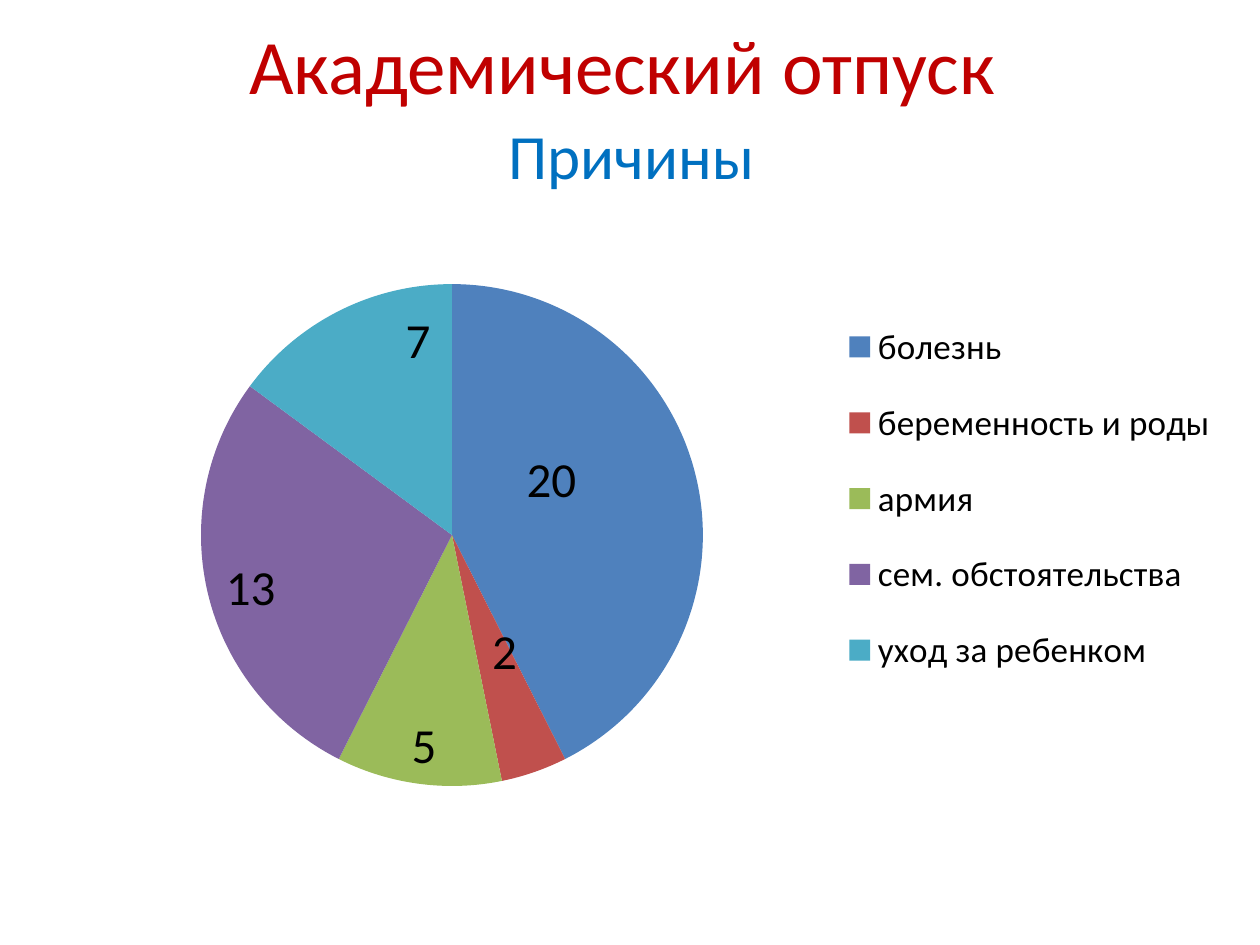
from pptx import Presentation
from pptx.chart.data import CategoryChartData
from pptx.dml.color import RGBColor
from pptx.enum.chart import XL_CHART_TYPE, XL_LABEL_POSITION, XL_LEGEND_POSITION
from pptx.enum.text import MSO_ANCHOR, PP_ALIGN
from pptx.oxml import parse_xml
from pptx.oxml.ns import nsdecls, qn
from pptx.util import Cm, Pt

FONT = "Calibri"
COLORS = {"title": "C00000", "subtitle": "0070C0", "text": "000000"}

# category, value, slice colour, label shift from the slice centre (share of chart)
REASONS = [
    ("болезнь", 20, "4F81BD", (-0.02, -0.04)),
    ("беременность и роды", 2, "C0504D", (0.01, 0)),
    ("армия", 5, "9BBB59", (-0.01, 0.14)),
    ("сем. обстоятельства", 13, "8064A2", (-0.07, 0.04)),
    ("уход за ребенком", 7, "4BACC6", (0.02, -0.13)),
]


def set_font(font, size, color):
    font.name = FONT
    font.size = Pt(size)
    font.color.rgb = RGBColor.from_string(color)


def make_layout(**parts):
    """Build a manual chart layout from its parts, in schema order."""
    items = "".join(f'<c:{tag} val="{val}"/>' for tag, val in parts.items())
    return parse_xml(f'<c:layout {nsdecls("c")}><c:manualLayout>{items}'
                     '</c:manualLayout></c:layout>')


def place_area(element, x, y, w, h, after=None, **target):
    """Fix a chart area at shares of the chart's width and height."""
    for old in element.findall(qn("c:layout")):
        element.remove(old)
    layout = make_layout(**target, xMode="edge", yMode="edge", x=x, y=y, w=w, h=h)
    if after is None:
        element.insert(0, layout)
    else:
        after.addnext(layout)


def add_heading(s, box, text, size, color):
    sp = s.shapes.add_textbox(*box)
    tf = sp.text_frame
    tf.word_wrap = True
    tf.vertical_anchor = MSO_ANCHOR.MIDDLE
    tf.text = text
    p = tf.paragraphs[0]
    p.alignment = PP_ALIGN.CENTER
    set_font(p.runs[0].font, size, color)


def add_reasons_chart(s, box):
    data = CategoryChartData()
    data.categories = [reason[0] for reason in REASONS]
    data.add_series("Series 1", [reason[1] for reason in REASONS])
    chart = s.shapes.add_chart(XL_CHART_TYPE.PIE, *box, data).chart
    chart.has_title = False
    set_font(chart.font, 18, COLORS["text"])
    place_area(chart.plots[0]._element.getparent(), 0.017, 0.116, 0.597, 0.805,
               layoutTarget="inner")

    # Legend
    chart.has_legend = True
    legend = chart.legend
    legend.position = XL_LEGEND_POSITION.RIGHT
    legend.include_in_layout = False
    set_font(legend.font, 20, COLORS["text"])
    element = legend._element
    place_area(element, 0.66, 0.13, 0.33, 0.66, after=element.find(qn("c:legendPos")))

    # Slices and their labels
    plot = chart.plots[0]
    plot.vary_by_categories = True
    plot.has_data_labels = True
    plot.data_labels.show_value = True
    plot.data_labels.show_percentage = False
    set_font(plot.data_labels.font, 28, COLORS["text"])
    for i, (_, _, color, (dx, dy)) in enumerate(REASONS):
        point = plot.series[0].points[i]
        point.format.fill.solid()
        point.format.fill.fore_color.rgb = RGBColor.from_string(color)
        label = point.data_label
        set_font(label.font, 28, COLORS["text"])
        label.position = XL_LABEL_POSITION.CENTER
        dlbl = plot.series[0]._element.findall(f'{qn("c:dLbls")}/{qn("c:dLbl")}')[i]
        dlbl.find(qn("c:idx")).addnext(make_layout(x=dx, y=dy))


def main():
    prs = Presentation()
    prs.slide_width, prs.slide_height = Cm(25.4), Cm(19.05)
    s = prs.slides.add_slide(prs.slide_layouts[6])

    # Headings
    left, width, height = Cm(1.3), Cm(22.86), Cm(2.36)
    add_heading(s, (left, Cm(0.1), width, height), "Академический отпуск ",
                44, COLORS["title"])
    add_heading(s, (left, Cm(1.93), width, height), "Причины",
                36, COLORS["subtitle"])

    # Chart of reasons
    add_reasons_chart(s, (Cm(1.9), Cm(4.27), width, Cm(12.57)))
    prs.save("out.pptx")


if __name__ == "__main__":
    main()
